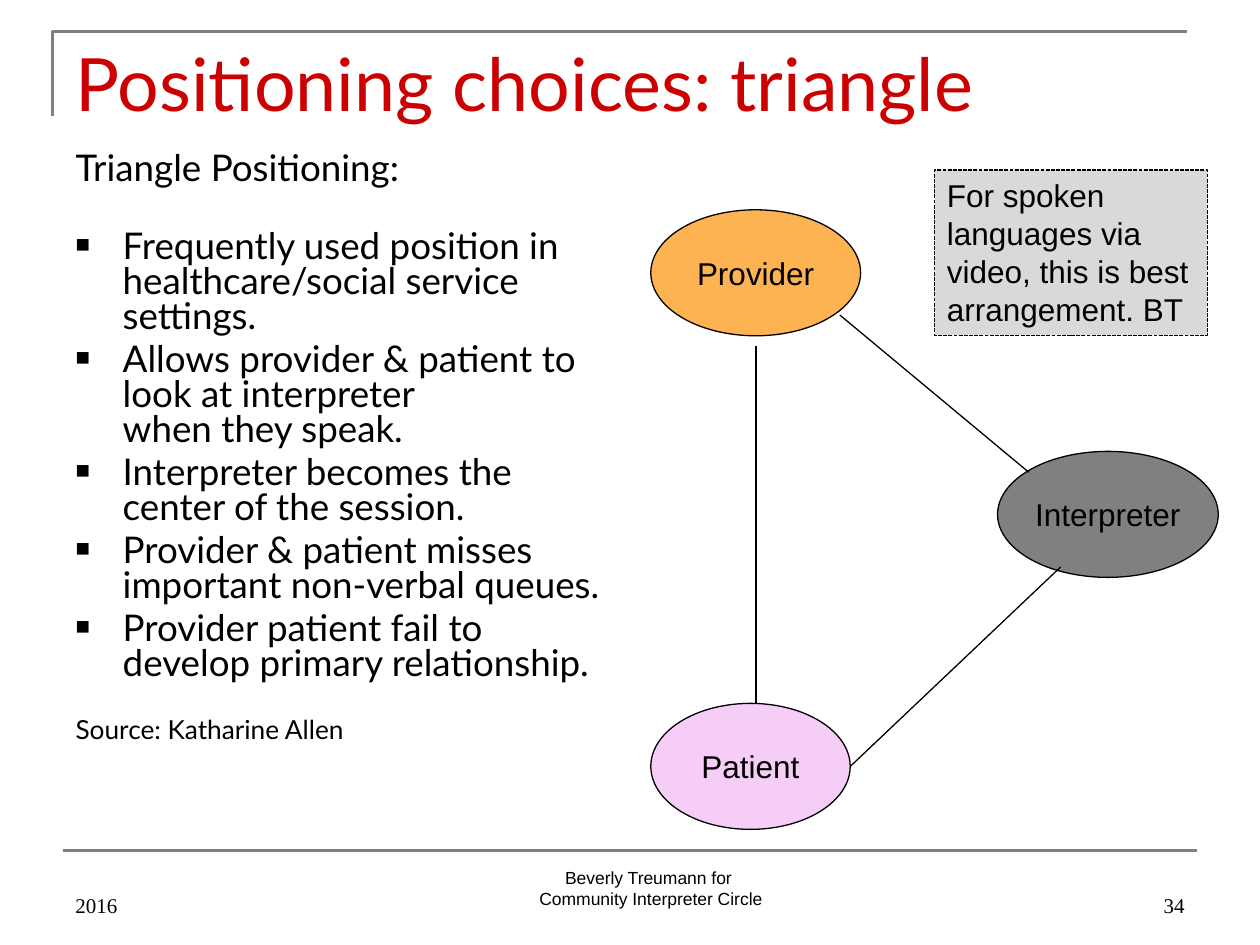
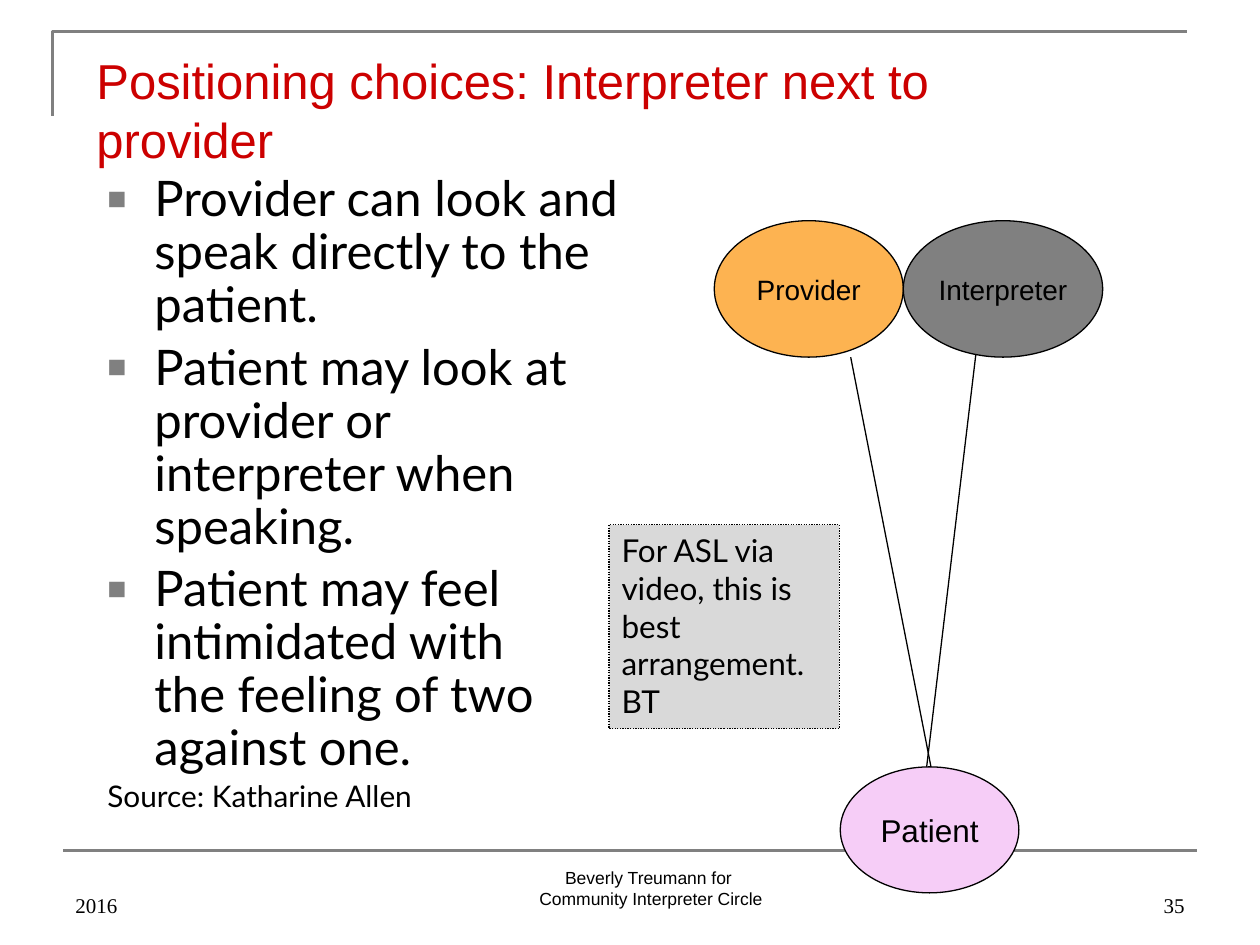
from dataclasses import dataclass
from lxml.etree import SubElement
from pptx import Presentation
from pptx.dml.color import RGBColor
from pptx.enum.dml import MSO_LINE
from pptx.enum.shapes import MSO_CONNECTOR as Connector, MSO_SHAPE as Preset
from pptx.enum.text import MSO_ANCHOR as Anchor, MSO_AUTO_SIZE as AutoSize, PP_ALIGN as Align
from pptx.oxml.ns import qn
from pptx.util import Cm, Pt


@dataclass(frozen=True)
class Theme:
    ink: str = "000000"
    rule: str = "808080"
    heading: str = "CC0000"
    note: str = "D9D9D9"
    provider: str = "FDB351"
    patient: str = "F6CDF7"
    interpreter: str = "808080"
    humanist: str = "Lato"
    sans: str = "Arial"
    serif: str = "Times New Roman"
    title_size: int = 42
    long_title_size: int = 28
    list_size: int = 21
    large_list_size: int = 28
    source_size: int = 15
    large_source_size: int = 17
    label_size: int = 18
    small_label_size: int = 16
    number_size: int = 12
    footer_size: int = 10
    thin: float = 0.75
    thick: float = 1.5


@dataclass(frozen=True)
class Box:
    left: float
    top: float
    width: float
    height: float

    def inner(self, left, top, width, height):
        return Box(self.left + left, self.top + top, width, height)

    def point(self, x, y):
        return Cm(self.left + x), Cm(self.top + y)

    def lengths(self):
        return [Cm(value) for value in (self.left, self.top, self.width, self.height)]


THEME = Theme()
PAGE = Box(0, 0, 25.4, 19.05)
ROLE_FILLS = {
    "Provider": THEME.provider,
    "Patient": THEME.patient,
    "Interpreter": THEME.interpreter,
}


def add_text(frame, text, font=THEME.sans, size=THEME.label_size, color=THEME.ink,
             align=Align.LEFT, spacing=1.0, before=0, after=0, bullet=None):
    para = frame.paragraphs[0]
    if para.runs:
        para = frame.add_paragraph()
    para.alignment = align
    para.line_spacing = spacing
    para.space_before, para.space_after = Pt(before), Pt(after)
    for index, line in enumerate(text.split("\n")):
        if index:
            para.add_line_break()
        span = para.add_run()
        span.text = line
        span.font.name, span.font.size = font, Pt(size)
        span.font.color.rgb = RGBColor.from_string(color)
    set_bullet(para, bullet)


def set_bullet(para, color):
    properties = para._p.get_or_add_pPr()
    indent = Cm(0.95) if color else 0
    properties.set("marL", str(indent))
    properties.set("indent", str(-indent))
    if not color:
        SubElement(properties, qn("a:buNone"))
        return
    tint = SubElement(properties, qn("a:buClr"))
    SubElement(tint, qn("a:srgbClr")).set("val", color)
    SubElement(properties, qn("a:buSzPct")).set("val", "65000")
    SubElement(properties, qn("a:buFont")).set("typeface", THEME.sans)
    SubElement(properties, qn("a:buChar")).set("char", "■")


def move(shape, box):
    shape.left, shape.top, shape.width, shape.height = box.lengths()


def set_line(shape, color=THEME.ink, width=THEME.thin):
    shape.line.color.rgb = RGBColor.from_string(color)
    shape.line.width = Pt(width)


def add_filled(page, preset, box, color):
    shape = page.shapes.add_shape(preset, *box.lengths())
    shape.shadow.inherit = False
    shape.fill.solid()
    shape.fill.fore_color.rgb = RGBColor.from_string(color)
    set_line(shape)
    return shape


def add_line(page, start, end, color=THEME.ink, width=THEME.thin):
    line = page.shapes.add_connector(Connector.STRAIGHT, *start, *end)
    set_line(line, color, width)
    SubElement(line._element.spPr, qn("a:effectLst"))


def add_label(page, box, text, anchor=Anchor.TOP, **style):
    frame = page.shapes.add_textbox(*box.lengths()).text_frame
    frame.word_wrap = True
    frame.vertical_anchor = anchor
    add_text(frame, text, **style)


def add_frame(page, box):
    builder = page.shapes.build_freeform(*box.point(1.06, 2.33), scale=1.0)
    builder.add_line_segments([box.point(1.06, 0.64), box.point(23.92, 0.64)], close=False)
    corner = builder.convert_to_shape()
    corner.shadow.inherit = False
    corner.fill.background()
    set_line(corner, THEME.rule, THEME.thick)
    add_line(page, box.point(1.27, 17.15), box.point(24.13, 17.15), THEME.rule, THEME.thick)


def add_footer(page, box, number):
    style = dict(anchor=Anchor.BOTTOM, font=THEME.serif, size=THEME.number_size)
    add_label(page, box.inner(0, 0, 5.93, 1.27), "2016", **style)
    add_label(page, box.inner(16.93, 0, 5.93, 1.27), number, align=Align.RIGHT, **style)
    add_label(page, box.inner(5.5, 0, 12.7, 1.12),
              "Beverly Treumann for \nCommunity Interpreter Circle",
              size=THEME.footer_size, align=Align.CENTER)


def add_title(page, box, text, **style):
    title = page.shapes.title
    move(title, box)
    frame = title.text_frame
    frame.auto_size = AutoSize.NONE
    frame.vertical_anchor = Anchor.TOP
    add_text(frame, text, color=THEME.heading, **style)


def add_list(page, box, items, source, size, source_size, spacing, bullet,
             heading=None, source_gap=0):
    body = page.placeholders[1]
    move(body, box)
    frame = body.text_frame
    frame.auto_size = AutoSize.NONE
    style = dict(font=THEME.humanist, spacing=spacing)
    if heading:
        add_text(frame, heading, size=size, after=size * 0.96, **style)
    for item in items:
        add_text(frame, item, size=size, before=size * 0.2, bullet=bullet, **style)
    add_text(frame, source, size=source_size, before=source_size * 0.2 + source_gap, **style)


def add_diagram(page, box, people, sight_lines, lines_behind=False):
    def draw_lines():
        for start, end in sight_lines:
            add_line(page, box.point(*start), box.point(*end))

    if lines_behind:
        draw_lines()
    for role, place, size in people:
        oval = add_filled(page, Preset.OVAL, box.inner(*place), ROLE_FILLS[role])
        oval.text_frame.word_wrap = False
        oval.text_frame.vertical_anchor = Anchor.MIDDLE
        add_text(oval.text_frame, role, size=size, align=Align.CENTER)
    if not lines_behind:
        draw_lines()


def add_note(page, box, text, dash, font):
    note = add_filled(page, Preset.RECTANGLE, box, THEME.note)
    note.line.dash_style = dash
    note.text_frame.word_wrap = True
    note.text_frame.vertical_anchor = Anchor.TOP
    add_text(note.text_frame, text, font=font)


def start_page(deck, number):
    page = deck.slides.add_slide(deck.slide_layouts[1])
    add_frame(page, PAGE)
    add_footer(page, PAGE.inner(1.27, 17.36, 22.86, 1.27), number)
    return page


def build_triangle(deck):
    page = start_page(deck, "34")
    add_title(page, PAGE.inner(1.27, 0.64, 22.86, 1.9), "Positioning choices: triangle",
              font=THEME.humanist, size=THEME.title_size)
    add_list(page, PAGE.inner(1.27, 2.96, 11.22, 13.97), [
        "Frequently used position in healthcare/social service \nsettings.",
        "Allows provider & patient to look at interpreter \nwhen they speak.",
        "Interpreter becomes the center of the session.",
        "Provider & patient misses important non-verbal queues.",
        "Provider patient fail to develop primary relationship.",
    ], "Source: Katharine Allen", THEME.list_size, THEME.source_size, 0.8, THEME.ink,
        heading="Triangle Positioning:", source_gap=17.5)
    add_diagram(page, PAGE.inner(13.12, 4.23, 11.43, 12.49), [
        ("Provider", (0, 0, 4.23, 2.54), THEME.label_size),
        ("Patient", (0, 9.95, 4.02, 2.54), THEME.label_size),
        ("Interpreter", (6.99, 4.87, 4.45, 2.54), THEME.label_size),
    ], [
        ((3.81, 2.12), (7.62, 5.29)),
        ((2.12, 2.75), (2.12, 9.95)),
        ((4.02, 11.22), (8.26, 7.2)),
    ])
    add_note(page, PAGE.inner(18.84, 3.43, 5.5, 3.33),
             "For spoken languages via video, this is best arrangement. BT",
             MSO_LINE.SQUARE_DOT, THEME.sans)


def build_next_to_provider(deck):
    page = start_page(deck, "35")
    add_title(page, PAGE.inner(1.69, 0.9, 19.47, 2.62),
              "Positioning choices: Interpreter next to provider", size=THEME.long_title_size)
    add_list(page, PAGE.inner(1.91, 3.39, 11.64, 13.84), [
        "Provider can look and \nspeak directly to the \npatient.",
        "Patient may look at provider or \ninterpreter when speaking.",
        "Patient may feel intimidated with\nthe feeling of two against one.",
    ], "Source: Katharine Allen", THEME.large_list_size, THEME.large_source_size, 0.9, THEME.rule)
    add_diagram(page, PAGE.inner(14.4, 4.45, 7.83, 13.55), [
        ("Patient", (2.54, 11.01, 3.6, 2.54), THEME.label_size),
        ("Provider", (0, 0, 3.81, 2.75), THEME.small_label_size),
        ("Interpreter", (3.81, 0, 4.02, 2.75), THEME.small_label_size),
    ], [
        ((2.75, 2.75), (4.45, 11.43)),
        ((5.29, 2.54), (4.23, 11.43)),
    ], lines_behind=True)
    add_note(page, PAGE.inner(12.28, 10.58, 4.64, 4.11),
             "For ASL via video, this is best arrangement. BT",
             MSO_LINE.ROUND_DOT, THEME.humanist)


def main():
    deck = Presentation()
    deck.slide_width, deck.slide_height = Cm(PAGE.width), Cm(PAGE.height)
    build_triangle(deck)
    build_next_to_provider(deck)
    deck.save("out.pptx")


if __name__ == "__main__":
    main()
